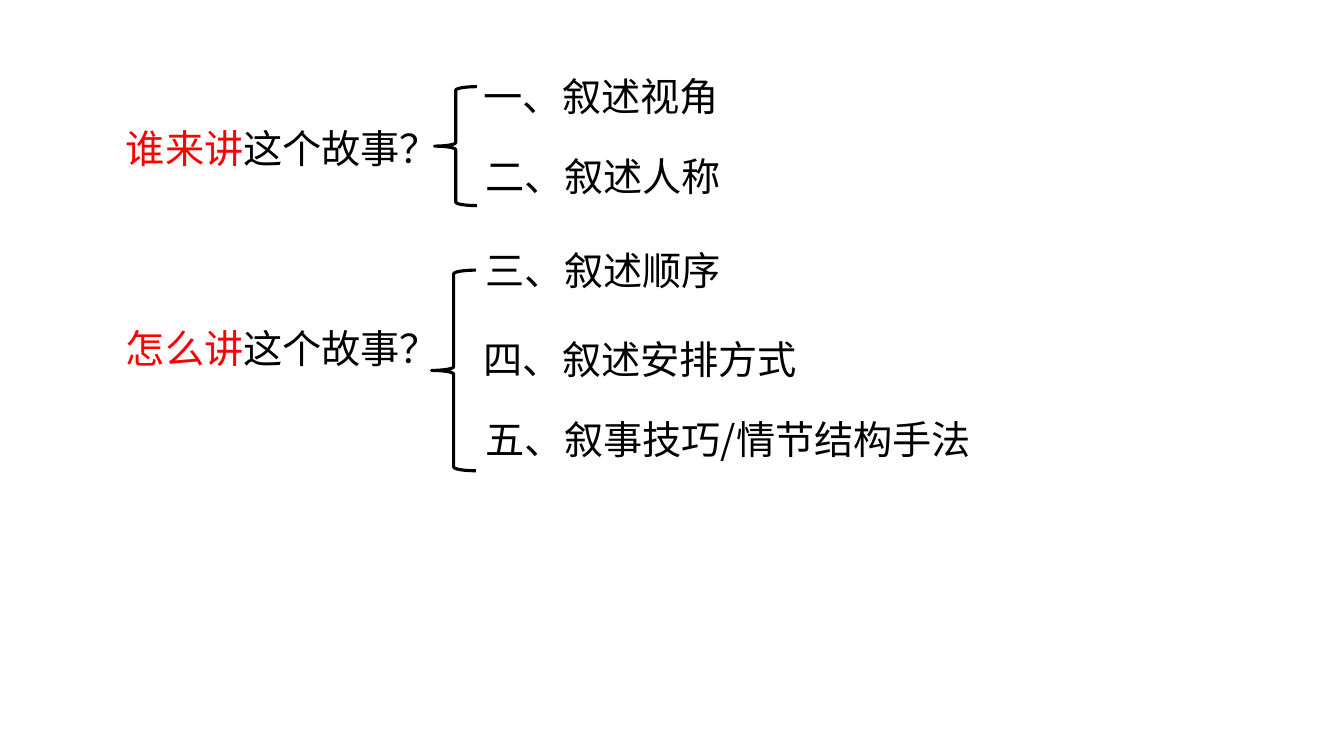
from lxml.etree import SubElement
from pptx import Presentation
from pptx.dml.color import RGBColor
from pptx.enum.lang import MSO_LANGUAGE_ID
from pptx.enum.shapes import MSO_SHAPE
from pptx.enum.text import MSO_ANCHOR, MSO_AUTO_SIZE
from pptx.oxml.ns import qn
from pptx.util import Inches, Pt

BLACK = RGBColor(0x00, 0x00, 0x00)
RED = RGBColor(0xFF, 0x00, 0x00)
FONT = "Noto Sans CJK SC"
SPAN_FORMAT = {"name": FONT, "size": Pt(28),
               "language_id": MSO_LANGUAGE_ID.SIMPLIFIED_CHINESE}
FRAME_FORMAT = {"word_wrap": True, "vertical_anchor": MSO_ANCHOR.TOP,
                "auto_size": MSO_AUTO_SIZE.SHAPE_TO_FIT_TEXT}
LINE_HEIGHT = 0.57
QUESTION_LEFT, QUESTION_WIDTH = 1.15, 3.39

# Each group: box top, question (offset, height), brace (left, offset, width,
# height), emphasised words, items (left, offset, width, text)
GROUPS = [
    (0.67, (0.51, LINE_HEIGHT), (4.31, 0.19, 0.42, 1.18), "谁来讲",
     [(4.7, 0, 2.6, "一、叙述视角"),
      (4.72, 0.79, 2.6, "二、叙述人称")]),
    (2.39, (0.78, 0.88), (4.28, 0.29, 0.44, 1.99), "怎么讲",
     [(4.72, 0, 2.88, "三、叙述顺序"),
      (4.7, 0.89, 3.39, "四、叙述安排方式"),
      (4.72, 1.68, 5.09, "五、叙事技巧/情节结构手法")]),
]


def add_text(page, box, spans):
    frame = page.shapes.add_textbox(*map(Inches, box)).text_frame
    for name, value in FRAME_FORMAT.items():
        setattr(frame, name, value)
    para = frame.paragraphs[0]
    for text, colour in spans:
        span = para.add_run()
        span.text = text
        for name, value in SPAN_FORMAT.items():
            setattr(span.font, name, value)
        span.font.color.rgb = colour
        east_asian = SubElement(span.font._element, qn("a:ea"))
        east_asian.set("typeface", FONT)


def add_brace(page, box):
    brace = page.shapes.add_shape(MSO_SHAPE.LEFT_BRACE, *map(Inches, box))
    brace.shadow.inherit = False
    brace.fill.background()
    brace.line.color.rgb = BLACK
    brace.line.width = Pt(2.25)


def add_group(page, top, question, brace, emphasis, items):
    """Place a question, its brace and its items below the given top."""
    offset, height = question
    add_text(page, (QUESTION_LEFT, top + offset, QUESTION_WIDTH, height),
             [(emphasis, RED), ("这个故事？", BLACK)])
    left, offset, width, height = brace
    add_brace(page, (left, top + offset, width, height))
    for left, offset, width, text in items:
        add_text(page, (left, top + offset, width, LINE_HEIGHT),
                 [(text, BLACK)])


def main():
    deck = Presentation()
    deck.slide_width, deck.slide_height = Inches(13.33), Inches(7.5)
    page = deck.slides.add_slide(deck.slide_layouts[6])
    for group in GROUPS:
        add_group(page, *group)
    deck.save("out.pptx")


if __name__ == "__main__":
    main()
